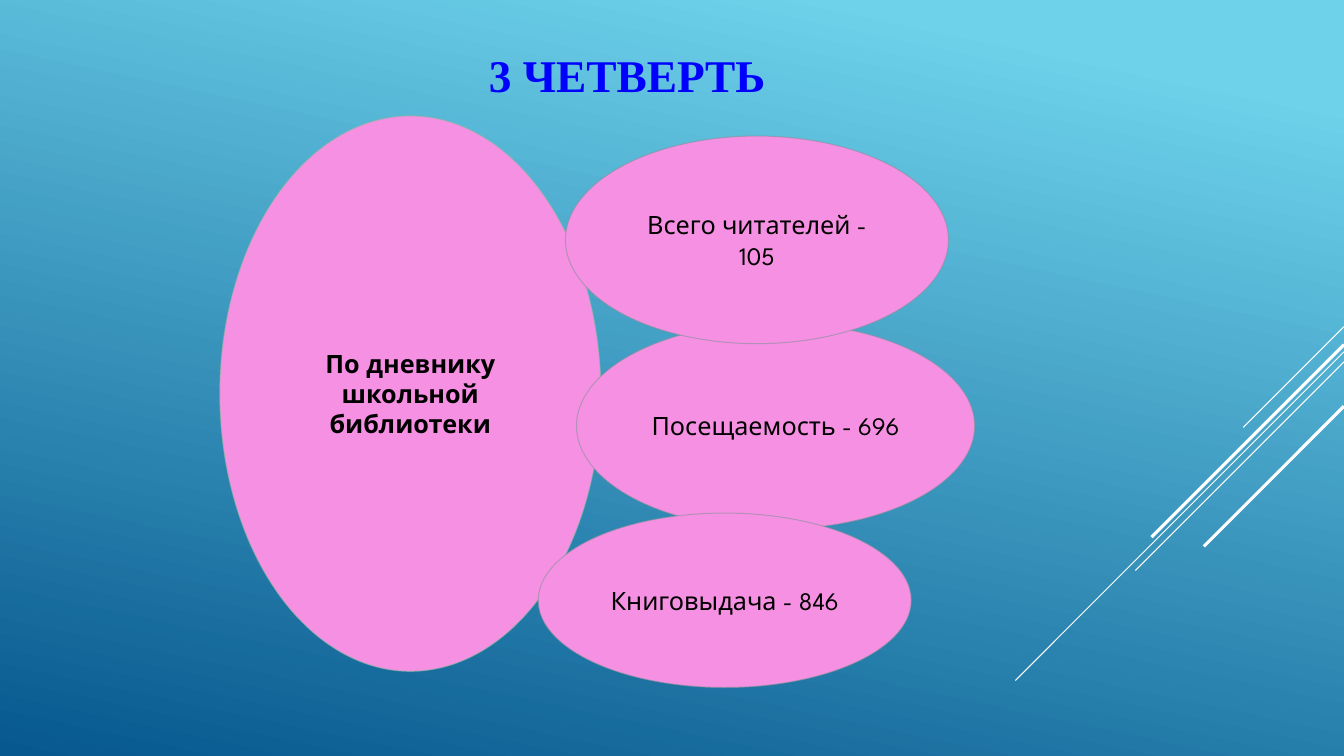
from lxml import etree
from pptx import Presentation
from pptx.dml.color import RGBColor
from pptx.enum.shapes import MSO_CONNECTOR, MSO_SHAPE
from pptx.enum.text import MSO_ANCHOR, PP_ALIGN
from pptx.oxml.ns import qn
from pptx.util import Pt

OVAL, NODE = MSO_SHAPE.OVAL, MSO_SHAPE.FLOWCHART_CONNECTOR
LEFT, CENTER = PP_ALIGN.LEFT, PP_ALIGN.CENTER
SKY, NAVY = RGBColor(0x6E, 0xD2, 0xEB), RGBColor(0x06, 0x58, 0x8E)
WHITE, BLACK = RGBColor(255, 255, 255), RGBColor(0, 0, 0)
BLUE, PINK = RGBColor(0, 0, 255), RGBColor(0xF6, 0x90, 0xE3)
GREEN, GRAY = RGBColor(0x8A, 0xB7, 0xA1), RGBColor(0x89, 0x91, 0x9C)

WIDTH, HEIGHT = 960, 540
TITLE = "3 ЧЕТВЕРТЬ"
TITLE_BOX = (342, 28, 421, 50)
# text, shape, box (left, top, width, height), outline, bold
OVALS = [
    ("По дневнику школьной библиотеки", OVAL, (157, 82.8, 272.2, 396.7), GREEN, True),
    ("Посещаемость - 696", NODE, (411.8, 230.4, 284.4, 147.6), GRAY, False),
    ("Всего читателей - 105", NODE, (403.9, 97.2, 273.6, 148.3), GRAY, False),
    ("Книговыдача - 846", NODE, (384.5, 366.5, 266.4, 124.6), GRAY, False),
]
# height at the right edge, run to the left, weight
RAYS = [(233.3, 72, 0.75), (251.3, 234.7, 0.75), (258.5, 149, 0.75),
        (246.2, 137.5, 2.25), (290.2, 100.1, 2.25)]


def put_text(shape, text, *, size, font, color, bold=False, align=CENTER):
    frame = shape.text_frame
    frame.word_wrap = True
    frame.vertical_anchor = MSO_ANCHOR.MIDDLE
    para = frame.paragraphs[0]
    para.alignment = align
    run = para.add_run()
    run.text = text
    run.font.size, run.font.name, run.font.bold = Pt(size), font, bold
    run.font.color.rgb = color


def paint_back(slide):
    fill = slide.background.fill
    fill.gradient()
    fill.gradient_angle = 258
    for stop, color, place in zip(fill.gradient_stops, (SKY, NAVY), (0.1, 1)):
        stop.color.rgb = color
        stop.position = place


def add_ray(slide, top, run, weight):
    """Draw a 45-degree line down and left from the right edge."""
    ray = slide.shapes.add_connector(MSO_CONNECTOR.STRAIGHT, Pt(WIDTH), Pt(top),
                                     Pt(WIDTH - run), Pt(top + run))
    ray.line.color.rgb = WHITE
    ray.line.width = Pt(weight)
    etree.SubElement(ray._element.spPr, qn("a:effectLst"))


def add_oval(slide, text, kind, box, edge, bold):
    oval = slide.shapes.add_shape(kind, *map(Pt, box))
    oval.shadow.inherit = False
    oval.fill.solid()
    oval.fill.fore_color.rgb = PINK
    oval.line.color.rgb = edge
    oval.line.width = Pt(0.75)
    tint = oval.line._ln.find(".//" + qn("a:srgbClr"))
    etree.SubElement(tint, qn("a:alpha"), val="60000")
    put_text(oval, text, size=18, font="League Spartan", color=BLACK, bold=bold)


def main():
    deck = Presentation()
    deck.slide_width, deck.slide_height = Pt(WIDTH), Pt(HEIGHT)
    slide = deck.slides.add_slide(deck.slide_layouts[5])
    paint_back(slide)
    for ray in RAYS:
        add_ray(slide, *ray)
    title = slide.shapes.title
    title.left, title.top, title.width, title.height = map(Pt, TITLE_BOX)
    put_text(title, TITLE, size=32.4, font="Times New Roman", color=BLUE,
             bold=True, align=LEFT)
    for oval in OVALS:
        add_oval(slide, *oval)
    deck.save("out.pptx")


if __name__ == "__main__":
    main()
